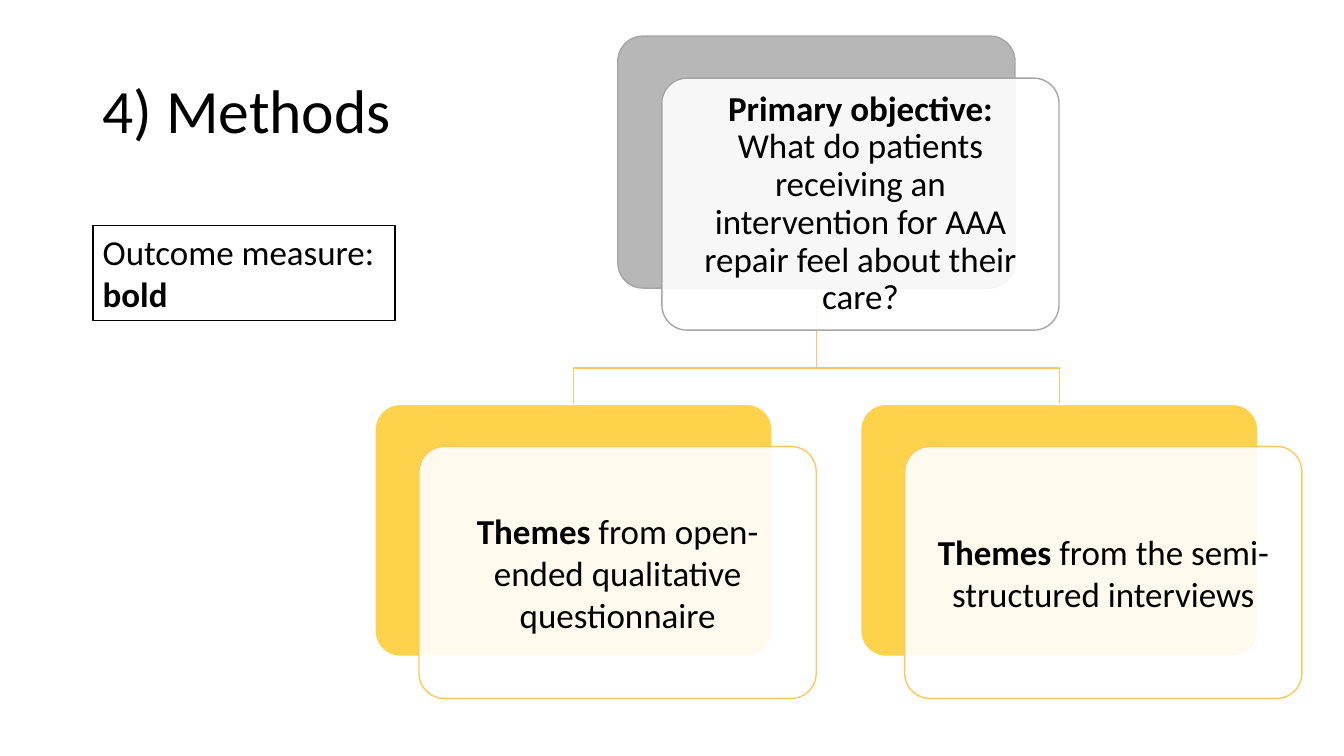
from dataclasses import dataclass

from lxml import etree
from pptx import Presentation
from pptx.dml.color import RGBColor
from pptx.enum.shapes import MSO_SHAPE
from pptx.enum.text import MSO_ANCHOR, PP_ALIGN
from pptx.oxml.ns import qn
from pptx.util import Cm, Pt

ROUNDED = MSO_SHAPE.ROUNDED_RECTANGLE
RECTANGLE = MSO_SHAPE.RECTANGLE
MIDDLE, TOP = MSO_ANCHOR.MIDDLE, MSO_ANCHOR.TOP
LEFT, CENTER = PP_ALIGN.LEFT, PP_ALIGN.CENTER


@dataclass(frozen=True)
class Theme:
    font: str = "Calibri"
    title_size: int = 44
    body_size: int = 25
    line_width: int = 1
    black: str = "000000"
    white: str = "FFFFFF"
    grey: str = "A5A5A5"
    gold: str = "FFC000"
    gold_line: str = "FFC75E"


@dataclass(frozen=True)
class Box:
    """A rectangle measured in centimetres."""
    left: float
    top: float
    width: float
    height: float

    @property
    def middle(self):
        return self.left + self.width / 2

    @property
    def bottom(self):
        return self.top + self.height

    def shifted(self, right, down):
        return Box(self.left + right, self.top + down, self.width, self.height)

    def lengths(self):
        return Cm(self.left), Cm(self.top), Cm(self.width), Cm(self.height)


THEME = Theme()
SLIDE_WIDTH, SLIDE_HEIGHT = 33.87, 19.05
TITLE_BOX = Box(2.33, 1.01, 29.21, 3.68)
OUTCOME_BOX = Box(2.34, 5.69, 7.62, 2.39)
DIAGRAM_BOX = Box(9.45, 0.91, 23.36, 16.69)
CARD_WIDTH, CARD_HEIGHT = 10.01, 6.35
PANEL_RIGHT, PANEL_DOWN = 1.11, 1.06
PANEL_INSET = 0.43
BRANCH_DROP = 0.92

OBJECTIVE = [("Primary objective: ", True),
             ("What do patients receiving an intervention for AAA repair feel about their care?", False)]
THEMES = [
    [("Themes", True), (" from open-ended qualitative questionnaire", False)],
    [("Themes", True), (" from the semi-structured interviews", False)],
]
OUTCOME = [("Outcome measure: ", False), ("bold", True)]


def write_text(shape, pieces, size, anchor=MIDDLE, alignment=LEFT, spacing=1.0):
    """Fill a shape with one paragraph of (text, bold) pieces."""
    frame = shape.text_frame
    frame.word_wrap = True
    frame.vertical_anchor = anchor
    paragraph = frame.paragraphs[0]
    paragraph.alignment = alignment
    paragraph.line_spacing = spacing
    for text, bold in pieces:
        run = paragraph.add_run()
        run.text = text
        run.font.name = THEME.font
        run.font.size = Pt(size)
        run.font.bold = bold
        run.font.color.rgb = RGBColor.from_string(THEME.black)


def style_line(shape, color):
    shape.shadow.inherit = False
    shape.line.color.rgb = RGBColor.from_string(color)
    shape.line.width = Pt(THEME.line_width)


def add_block(slide, kind, box, fill, line, opacity=100):
    shape = slide.shapes.add_shape(kind, *box.lengths())
    style_line(shape, line)
    shape.fill.solid()
    shape.fill.fore_color.rgb = RGBColor.from_string(fill)
    if opacity < 100:
        color = shape.fill._xPr.find(qn("a:solidFill"))[0]
        etree.SubElement(color, qn("a:alpha"), val=str(opacity * 1000))
    if kind == ROUNDED:
        shape.adjustments[0] = 0.1
    return shape


def add_title(slide, box):
    shape = slide.shapes.add_textbox(*box.lengths())
    write_text(shape, [("4) Methods", False)], THEME.title_size, spacing=0.9)


def add_outcome_note(slide, box):
    shape = add_block(slide, RECTANGLE, box, THEME.white, THEME.black)
    write_text(shape, OUTCOME, THEME.body_size, anchor=TOP)


def add_branch(slide, parent, child):
    """Draw the elbow line from a parent card down to a child card."""
    bend = child.top - BRANCH_DROP
    points = [(parent.middle, parent.bottom), (parent.middle, bend),
              (child.middle, bend), (child.middle, child.top)]
    start, *rest = [(Cm(x), Cm(y)) for x, y in points]
    builder = slide.shapes.build_freeform(*start)
    builder.add_line_segments(rest, close=False)
    branch = builder.convert_to_shape()
    branch.fill.background()
    style_line(branch, THEME.gold_line)


def add_card(slide, box, pieces, back, spacing=1.0):
    """Draw a coloured card, given (fill, opacity, edge, panel edge), and its text panel."""
    fill, opacity, edge, panel_edge = back
    add_block(slide, ROUNDED, box, fill, edge, opacity)
    panel = add_block(slide, ROUNDED, box.shifted(PANEL_RIGHT, PANEL_DOWN),
                      THEME.white, panel_edge, 90)
    frame = panel.text_frame
    frame.margin_left = frame.margin_right = Cm(PANEL_INSET)
    frame.margin_top = frame.margin_bottom = Cm(PANEL_INSET)
    write_text(panel, pieces, THEME.body_size, alignment=CENTER, spacing=spacing)


def add_objective_tree(slide, box):
    child_top = box.bottom - PANEL_DOWN - CARD_HEIGHT
    span = box.width - PANEL_RIGHT - CARD_WIDTH
    step = span / (len(THEMES) - 1)
    parent = Box(box.left + span / 2, box.top, CARD_WIDTH, CARD_HEIGHT)
    children = [Box(box.left + index * step, child_top, CARD_WIDTH, CARD_HEIGHT)
                for index in range(len(THEMES))]
    for child in reversed(children):
        add_branch(slide, parent, child)
    add_card(slide, parent, OBJECTIVE, (THEME.grey, 80, THEME.grey, THEME.grey), spacing=0.9)
    for child, pieces in zip(children, THEMES):
        add_card(slide, child, pieces, (THEME.gold, 70, THEME.white, THEME.gold_line))


def main():
    presentation = Presentation()
    presentation.slide_width = Cm(SLIDE_WIDTH)
    presentation.slide_height = Cm(SLIDE_HEIGHT)
    slide = presentation.slides.add_slide(presentation.slide_layouts[6])
    add_title(slide, TITLE_BOX)
    add_objective_tree(slide, DIAGRAM_BOX)
    add_outcome_note(slide, OUTCOME_BOX)
    presentation.save("out.pptx")


if __name__ == "__main__":
    main()
